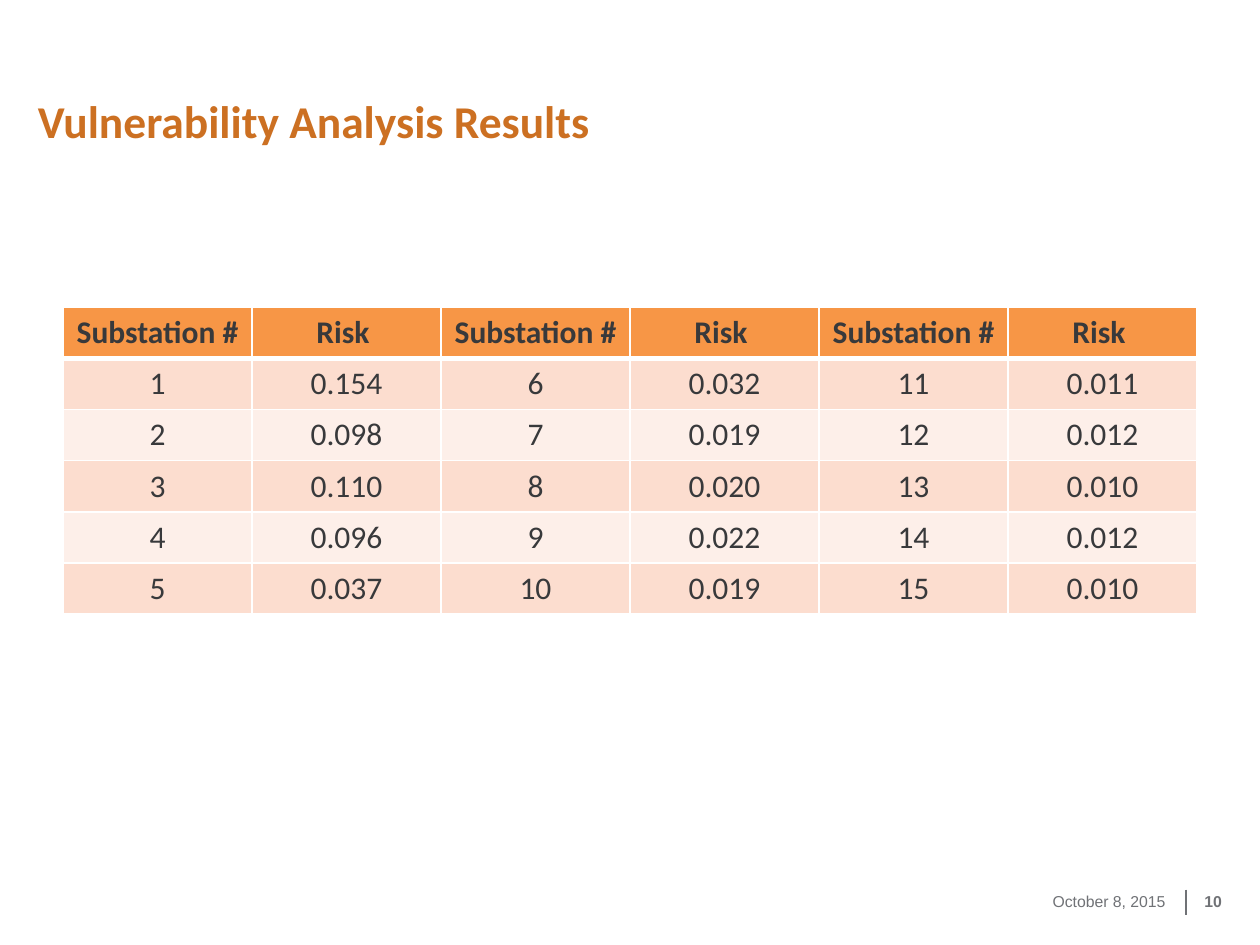
"""Build the vulnerability analysis results slide."""
from lxml import etree
from pptx import Presentation
from pptx.dml.color import RGBColor
from pptx.enum.shapes import MSO_CONNECTOR
from pptx.enum.text import MSO_ANCHOR, MSO_AUTO_SIZE, PP_ALIGN
from pptx.oxml.ns import qn
from pptx.util import Inches, Pt

LEFT, CENTER, RIGHT = PP_ALIGN.LEFT, PP_ALIGN.CENTER, PP_ALIGN.RIGHT
MIDDLE, BOTTOM = MSO_ANCHOR.MIDDLE, MSO_ANCHOR.BOTTOM
NO_AUTOFIT = MSO_AUTO_SIZE.NONE
STRAIGHT = MSO_CONNECTOR.STRAIGHT

HEADINGS = ["Substation #", "Risk "] * 3
RISKS = [
    "0.154", "0.098", "0.110", "0.096", "0.037",
    "0.032", "0.019", "0.020", "0.022", "0.019",
    "0.011", "0.012", "0.010", "0.012", "0.010",
]
BODY_ROWS = 5


def color(value):
    return RGBColor.from_string(value)


def write(frame, text, *, size, font, fill, bold=False, align=LEFT):
    paragraph = frame.paragraphs[0]
    paragraph.alignment = align
    run = paragraph.add_run()
    run.text = text
    run.font.size = Pt(size)
    run.font.name = font
    run.font.bold = bold
    run.font.color.rgb = color(fill)


def set_borders(cell, line_color, **widths):
    properties = cell._tc.get_or_add_tcPr()
    for index, side in enumerate("LRTB"):
        line = etree.Element(qn(f"a:ln{side}"), w=str(Pt(widths.get(side, 1))))
        fill = etree.SubElement(line, qn("a:solidFill"))
        etree.SubElement(fill, qn("a:srgbClr"), val=line_color)
        properties.insert(index, line)


class SlideBuilder:
    """Hold the style and the current slide."""

    heading_font, footer_font = "Calibri", "Arial"
    title_color, text_color, footer_color = "CC7022", "38393B", "707276"
    header_fill, band_fills, border = "F79646", ("FCDDCF", "FDEFE9"), "FFFFFF"

    def __init__(self, presentation):
        self.slide = presentation.slides.add_slide(presentation.slide_layouts[5])

    def prepare(self, shape, anchor, right=0):
        frame = shape.text_frame
        frame.word_wrap = True
        frame.auto_size = NO_AUTOFIT
        frame.vertical_anchor = anchor
        frame.margin_left = frame.margin_top = frame.margin_bottom = 0
        frame.margin_right = Inches(right)
        return frame

    def title(self, text, left, top, width, height):
        shape = self.slide.shapes.title
        shape.left, shape.top = Inches(left), Inches(top)
        shape.width, shape.height = Inches(width), Inches(height)
        write(self.prepare(shape, BOTTOM), text, size=26,
              font=self.heading_font, fill=self.title_color, bold=True)

    def footer(self, text, left, width, right=0, **style):
        shape = self.slide.shapes.add_textbox(
            Inches(left), Inches(6.95), Inches(width), Inches(0.4))
        write(self.prepare(shape, MIDDLE, right), text, size=9,
              font=self.footer_font, fill=self.footer_color, **style)

    def divider(self, x, top, bottom):
        line = self.slide.shapes.add_connector(
            STRAIGHT, Inches(x), Inches(top), Inches(x), Inches(bottom))
        line.line.color.rgb = color(self.footer_color)
        line.line.width = Pt(1)
        etree.SubElement(line._element.spPr, qn("a:effectLst"))

    def table(self, rows, left, top, width, height):
        table = self.slide.shapes.add_table(
            len(rows), len(rows[0]), Inches(left), Inches(top),
            Inches(width), Inches(height)).table
        for row_index, values in enumerate(rows):
            header = row_index == 0
            fill = self.header_fill if header else self.band_fills[(row_index - 1) % 2]
            widths = {0: {"B": 3}, 1: {"T": 3}}.get(row_index, {})
            for column_index, value in enumerate(values):
                cell = table.cell(row_index, column_index)
                cell.fill.solid()
                cell.fill.fore_color.rgb = color(fill)
                set_borders(cell, self.border, **widths)
                write(cell.text_frame, value, size=18, font=self.heading_font,
                      fill=self.text_color, bold=header, align=CENTER)


def risk_rows():
    rows = [HEADINGS]
    for first in range(BODY_ROWS):
        row = []
        for index in range(first, len(RISKS), BODY_ROWS):
            row += [str(index + 1), RISKS[index]]
        rows.append(row)
    return rows


def main():
    presentation = Presentation()
    presentation.slide_width = Inches(10)
    presentation.slide_height = Inches(7.5)
    builder = SlideBuilder(presentation)
    builder.divider(9.41, 7.06, 7.26)
    builder.title("Vulnerability Analysis Results", 0.3, 0.22, 7.25, 0.95)
    builder.footer("October 8, 2015", 7.5, 1.75, align=RIGHT)
    builder.footer("10", 9.56, 0.33, right=0.1, bold=True)
    builder.table(risk_rows(), 0.5, 2.44, 9, 2.43)
    presentation.save("out.pptx")


if __name__ == "__main__":
    main()
